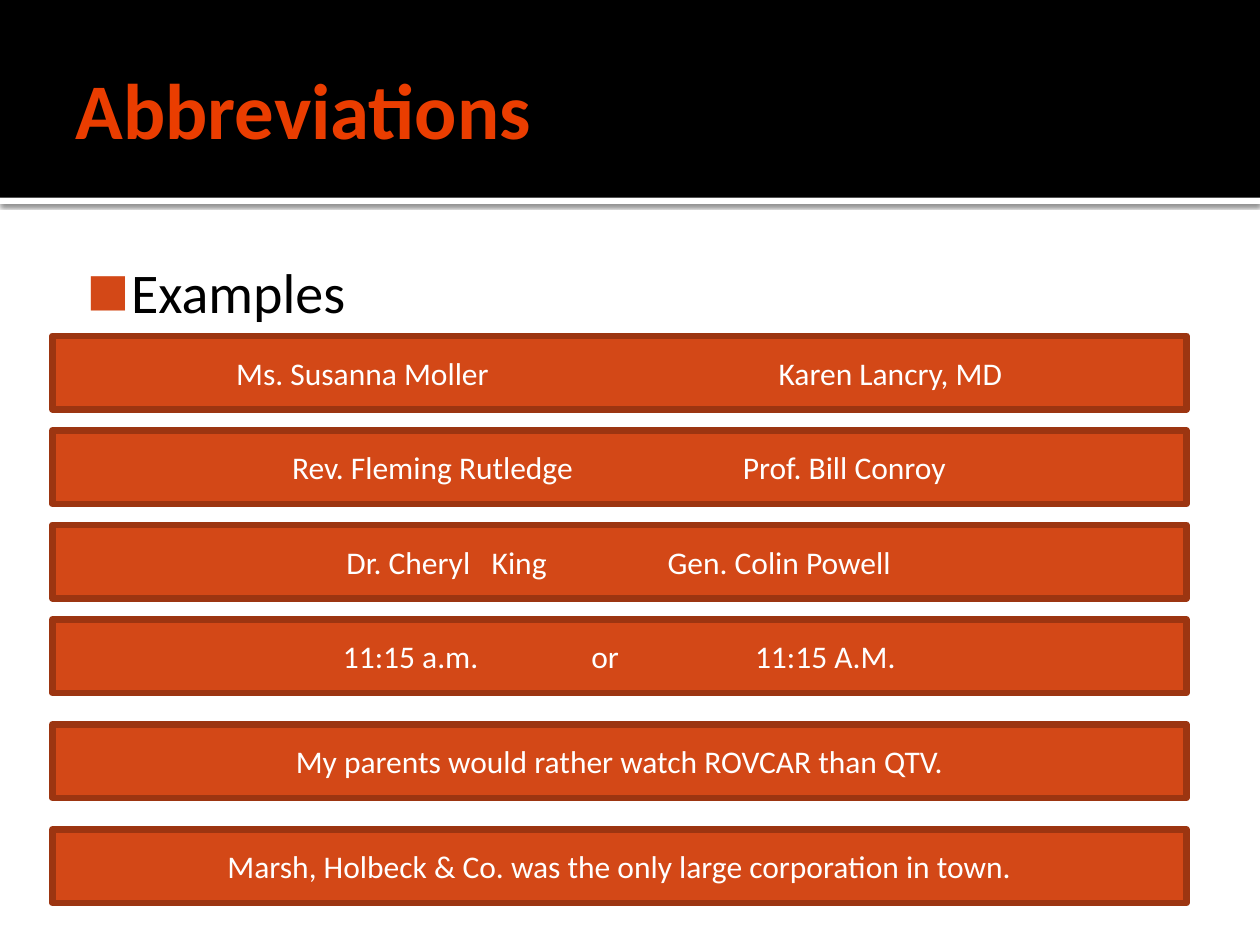
from lxml import etree
from pptx import Presentation, util as u
from pptx.dml.color import RGBColor
from pptx.enum import shapes, text
from pptx.oxml import ns

Pt = u.Pt
TITLE = "Abbreviations"
HEADING = "Examples"
# (text pieces, start of each piece from the left edge of its bar; none means centred)
EXAMPLES = [
    (["Ms. Susanna Moller", "Karen Lancry, MD"], [105, 415]),
    (["Rev. Fleming Rutledge", "Prof. Bill Conroy"], [137, 394.5]),
    (["Dr. Cheryl", "King", "Gen. Colin Powell"], [168, 251, 351.5]),
    (["11:15 a.m.", "or", "11:15 A.M."], [166, 308, 401.5]),
    (["My parents would rather watch ROVCAR than QTV."], []),
    (["Marsh, Holbeck & Co. was the only large corporation in town."], []),
]
PAIR_STEP, SENTENCE_STEP = 54, 60


def color(value):
    return RGBColor.from_string(value)


def add(parent, tag, **attributes):
    return etree.SubElement(parent, ns.qn(tag), {k: str(v) for k, v in attributes.items()})


def add_bar(page, left, top, width, height, fill, line=None):
    bar = page.shapes.add_shape(shapes.MSO_SHAPE.RECTANGLE, Pt(left), Pt(top), Pt(width), Pt(height))
    bar.shadow.inherit = False
    bar.fill.solid()
    bar.fill.fore_color.rgb = color(fill)
    if line:
        bar.line.color.rgb = color(line)
        bar.line.width = Pt(3.78)
    else:
        bar.line.fill.background()
    return bar


def style(para, size, value, bold=False):
    para.font.name, para.font.size, para.font.bold = "Calibri", Pt(size), bold
    para.font.color.rgb = color(value)


def fill_placeholder(box, words, place, insets, anchor):
    box.left, box.top, box.width, box.height = map(Pt, place)
    frame = box.text_frame
    frame.text = words
    frame.word_wrap, frame.auto_size = True, text.MSO_AUTO_SIZE.NONE
    frame.vertical_anchor = anchor
    frame.margin_left, frame.margin_top, frame.margin_right, frame.margin_bottom = map(Pt, insets)
    return frame.paragraphs[0]


def add_header(page):
    rule = add_bar(page, 0, 113, 720, 3.6, "FFFFFF")
    effects = rule.element.spPr.find(ns.qn("a:effectLst"))
    shadow = add(effects, "a:outerShdw", blurRad=Pt(2.5), dist=Pt(0.8), dir=90 * 60000,
                 algn="tl", rotWithShape=0)
    add(add(shadow, "a:srgbClr", val="000000"), "a:alpha", val=60000)
    band = add_bar(page, 0, 0, 720, 113, "000000")
    for index, bar in enumerate((rule, band), 2):
        page.shapes.element.insert(index, bar.element)


def add_heading(page):
    title = fill_placeholder(page.shapes.title, TITLE, (36, 12.24, 648, 98.64),
                             (7.2, 3.6, 3.6, 3.6), text.MSO_ANCHOR.MIDDLE)
    title.alignment = text.PP_ALIGN.LEFT
    style(title, 45, "EA3D00", True)
    item = fill_placeholder(page.placeholders[1], HEADING, (36, 139.68, 648, 364.32),
                            (4.32, 7.2, 7.2, 3.6), text.MSO_ANCHOR.TOP)
    item.space_before = Pt(0)
    style(item, 32, "000000")
    props = item._p.get_or_add_pPr()
    props.set("marL", str(Pt(34.56)))
    props.set("indent", str(Pt(-25.2)))
    add(add(props, "a:buClr"), "a:srgbClr", val="D34817")
    add(props, "a:buSzPct", val=80000)
    add(props, "a:buFont", typeface="Calibri")
    add(props, "a:buChar", char="■")
    props.append(props.find(ns.qn("a:defRPr")))


def add_example(page, top, pieces, starts):
    bar = add_bar(page, 30, top, 648, 42, "D34817", "9C3511")
    frame = bar.text_frame
    frame.word_wrap, frame.vertical_anchor = True, text.MSO_ANCHOR.MIDDLE
    para = frame.paragraphs[0]
    para.add_run().text = "\t".join(pieces)
    para.alignment = text.PP_ALIGN.LEFT if starts else text.PP_ALIGN.CENTER
    if starts:
        frame.margin_left = Pt(starts[0])
        stops = add(para._p.get_or_add_pPr(), "a:tabLst")
        for start in starts[1:]:
            add(stops, "a:tab", pos=Pt(start - starts[0]), algn="l")
    style(para, 18, "FFFFFF")


def main():
    """Build the abbreviations slide."""
    deck = Presentation()
    deck.slide_width, deck.slide_height = Pt(720), Pt(540)
    page = deck.slides.add_slide(deck.slide_layouts[1])
    add_header(page)
    add_heading(page)
    top = 192
    for index, (pieces, starts) in enumerate(EXAMPLES):
        if index:
            top += PAIR_STEP if starts else SENTENCE_STEP
        add_example(page, top, pieces, starts)
    deck.save("out.pptx")


if __name__ == "__main__":
    main()
